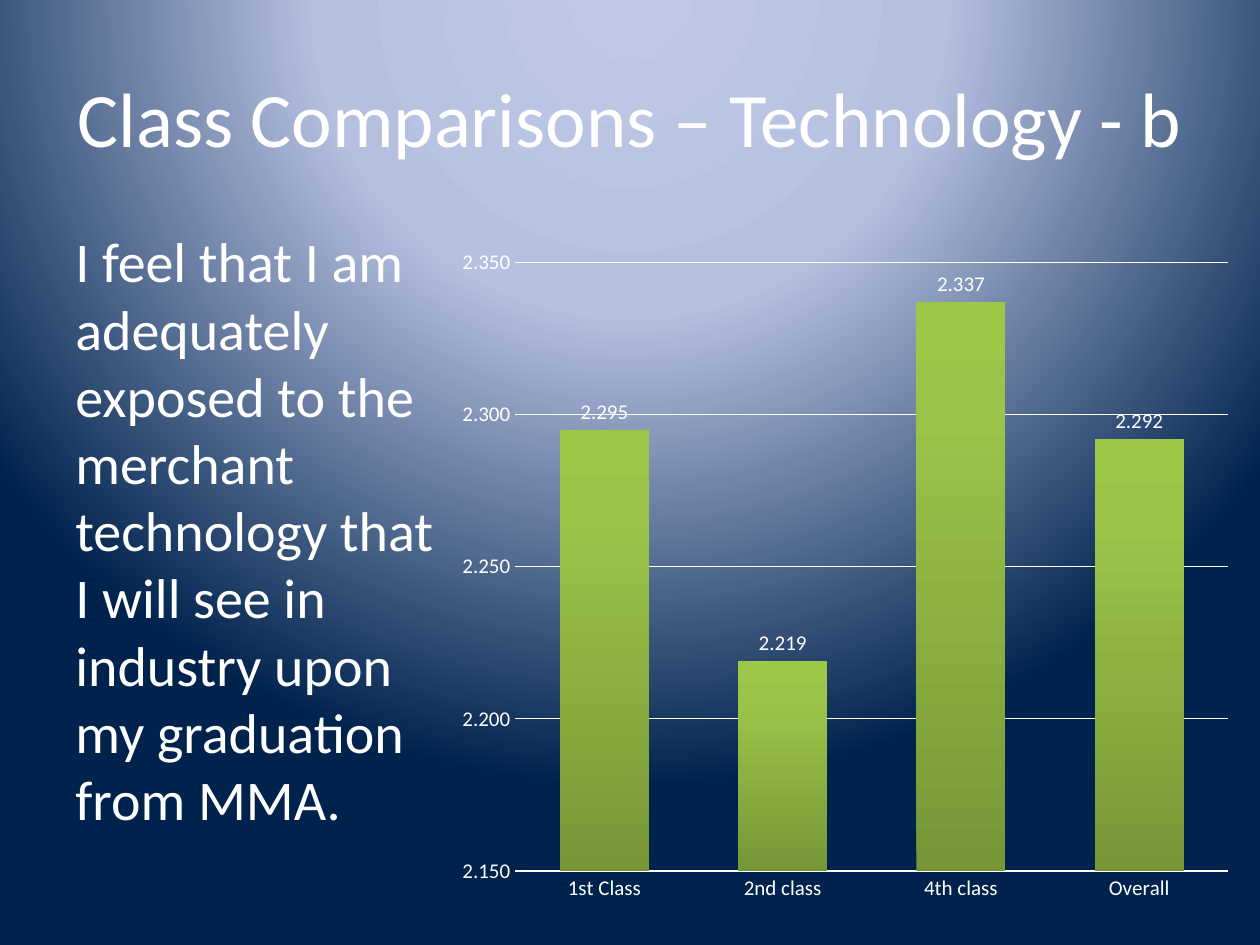
"""Build the class comparison slide with its column chart."""
from dataclasses import dataclass
from typing import NamedTuple

import pptx
import pptx.chart.data
import pptx.dml.color
import pptx.enum.chart
import pptx.enum.text
import pptx.oxml
import pptx.oxml.ns
import pptx.util
from pptx.util import Cm


class Stop(NamedTuple):
    percent: int
    color: str


class Frame(NamedTuple):
    left: float
    top: float
    width: float
    height: float

    def lengths(self) -> list:
        return [Cm(value) for value in self]


@dataclass(frozen=True)
class Theme:
    font: str = "Calibri"
    text: str = "FFFFFF"
    title_size: int = 44
    body_size: int = 32
    chart_size: int = 12
    backdrop: tuple = (Stop(0, "BFC9E5"), Stop(40, "B5C0E0"), Stop(100, "00234D"))
    column: tuple = (Stop(0, "779737"), Stop(80, "9BC348"), Stop(100, "9DC746"))


@dataclass(frozen=True)
class TextBlock:
    text: str
    frame: Frame
    size: int
    align: pptx.enum.text.PP_ALIGN
    anchor: pptx.enum.text.MSO_ANCHOR


THEME = Theme()
WHITE = pptx.dml.color.RGBColor.from_string(THEME.text)
TITLE = TextBlock(
    "Class Comparisons – Technology - b", Frame(1.27, 0.76, 22.86, 3.18),
    THEME.title_size, pptx.enum.text.PP_ALIGN.CENTER, pptx.enum.text.MSO_ANCHOR.MIDDLE)
STATEMENT = TextBlock(
    "I feel that I am adequately exposed to the merchant technology that "
    "I will see in industry upon my graduation from MMA.",
    Frame(1.27, 4.45, 8.26, 12.57),
    THEME.body_size, pptx.enum.text.PP_ALIGN.LEFT, pptx.enum.text.MSO_ANCHOR.TOP)
CHART_FRAME = Frame(8.89, 4.9, 16.1, 13.51)
SCORES = {"1st Class": 2.295, "2nd class": 2.219, "4th class": 2.337, "Overall": 2.292}
SCORE_FORMAT = "0.000"
RADIAL = ('<a:path path="circle"><a:fillToRect l="50000" t="-80000" '
          'r="50000" b="180000"/></a:path>')
UPWARD = '<a:lin ang="16200000" scaled="0"/>'


def set_gradient(fill, owner, stops: tuple[Stop, ...], direction: str) -> None:
    """Give a fill the listed stops and direction."""
    fill.gradient()
    current = owner.find(".//" + pptx.oxml.ns.qn("a:gradFill"))
    listed = "".join(
        f'<a:gs pos="{stop.percent * 1000}"><a:srgbClr val="{stop.color}"/></a:gs>'
        for stop in stops)
    current.getparent().replace(current, pptx.oxml.parse_xml(
        f'<a:gradFill {pptx.oxml.ns.nsdecls("a")} rotWithShape="1">'
        f'<a:gsLst>{listed}</a:gsLst>{direction}</a:gradFill>'))


def set_font(font, size: int) -> None:
    """Apply the theme font and text colour."""
    font.name = THEME.font
    font.size = pptx.util.Pt(size)
    font.bold = False
    font.color.rgb = WHITE


def write_text(box, block: TextBlock) -> None:
    """Place a box and fill it with a text block."""
    box.left, box.top, box.width, box.height = block.frame.lengths()
    frame = box.text_frame
    frame.text = block.text
    frame.word_wrap = True
    frame.auto_size = pptx.enum.text.MSO_AUTO_SIZE.NONE
    frame.vertical_anchor = block.anchor
    para = frame.paragraphs[0]
    para.alignment = block.align
    set_font(para.runs[0].font, block.size)


def set_line(line, width: float) -> None:
    """Draw a line in the text colour."""
    line.color.rgb = WHITE
    line.width = pptx.util.Pt(width)


def set_plot_area(chart, area: Frame) -> None:
    """Fix the inner plot area as fractions of the chart."""
    plot_area = chart.element.find(".//" + pptx.oxml.ns.qn("c:plotArea"))
    for layout in plot_area.findall(pptx.oxml.ns.qn("c:layout")):
        plot_area.remove(layout)
    places = "".join(f'<c:{name} val="{value}"/>' for name, value in zip("xywh", area))
    plot_area.insert(0, pptx.oxml.parse_xml(
        f'<c:layout {pptx.oxml.ns.nsdecls("c")}><c:manualLayout>'
        '<c:layoutTarget val="inner"/><c:xMode val="edge"/><c:yMode val="edge"/>'
        f'{places}</c:manualLayout></c:layout>'))


def add_score_chart(page) -> None:
    """Add the column chart of class scores."""
    enum = pptx.enum.chart
    data = pptx.chart.data.CategoryChartData(number_format=SCORE_FORMAT)
    data.categories = list(SCORES)
    data.add_series("Series 1", list(SCORES.values()))
    chart = page.shapes.add_chart(
        enum.XL_CHART_TYPE.COLUMN_CLUSTERED, *CHART_FRAME.lengths(), data).chart
    chart.has_title = False
    chart.has_legend = False
    set_font(chart.font, THEME.chart_size)

    for axis in (chart.category_axis, chart.value_axis):
        axis.major_tick_mark = enum.XL_TICK_MARK.NONE
        axis.minor_tick_mark = enum.XL_TICK_MARK.NONE
        set_font(axis.tick_labels.font, THEME.chart_size)
    set_line(chart.category_axis.format.line, 1)
    scale = chart.value_axis
    scale.minimum_scale, scale.maximum_scale, scale.major_unit = 2.15, 2.35, 0.05
    scale.format.line.fill.background()
    set_line(scale.major_gridlines.format.line, 0.75)

    plot = chart.plots[0]
    plot.gap_width, plot.overlap, plot.vary_by_categories = 100, -24, False
    plot.has_data_labels = True
    labels = plot.data_labels
    labels.show_value = True
    labels.position = enum.XL_LABEL_POSITION.OUTSIDE_END
    set_font(labels.font, THEME.chart_size)
    for numbers in (scale.tick_labels, labels):
        numbers.number_format = SCORE_FORMAT
        numbers.number_format_is_linked = False
    set_gradient(plot.series[0].format.fill, chart.element, THEME.column, UPWARD)
    set_plot_area(chart, Frame(0.093, 0.029, 0.893, 0.908))


def main() -> None:
    """Build and save the deck."""
    deck = pptx.Presentation()
    deck.slide_width, deck.slide_height = Cm(25.4), Cm(19.05)
    page = deck.slides.add_slide(deck.slide_layouts.get_by_name("Title Only"))
    set_gradient(page.background.fill, page.element, THEME.backdrop, RADIAL)
    write_text(page.shapes.title, TITLE)
    write_text(page.shapes.add_textbox(*STATEMENT.frame.lengths()), STATEMENT)
    add_score_chart(page)
    deck.save("out.pptx")


if __name__ == "__main__":
    main()
